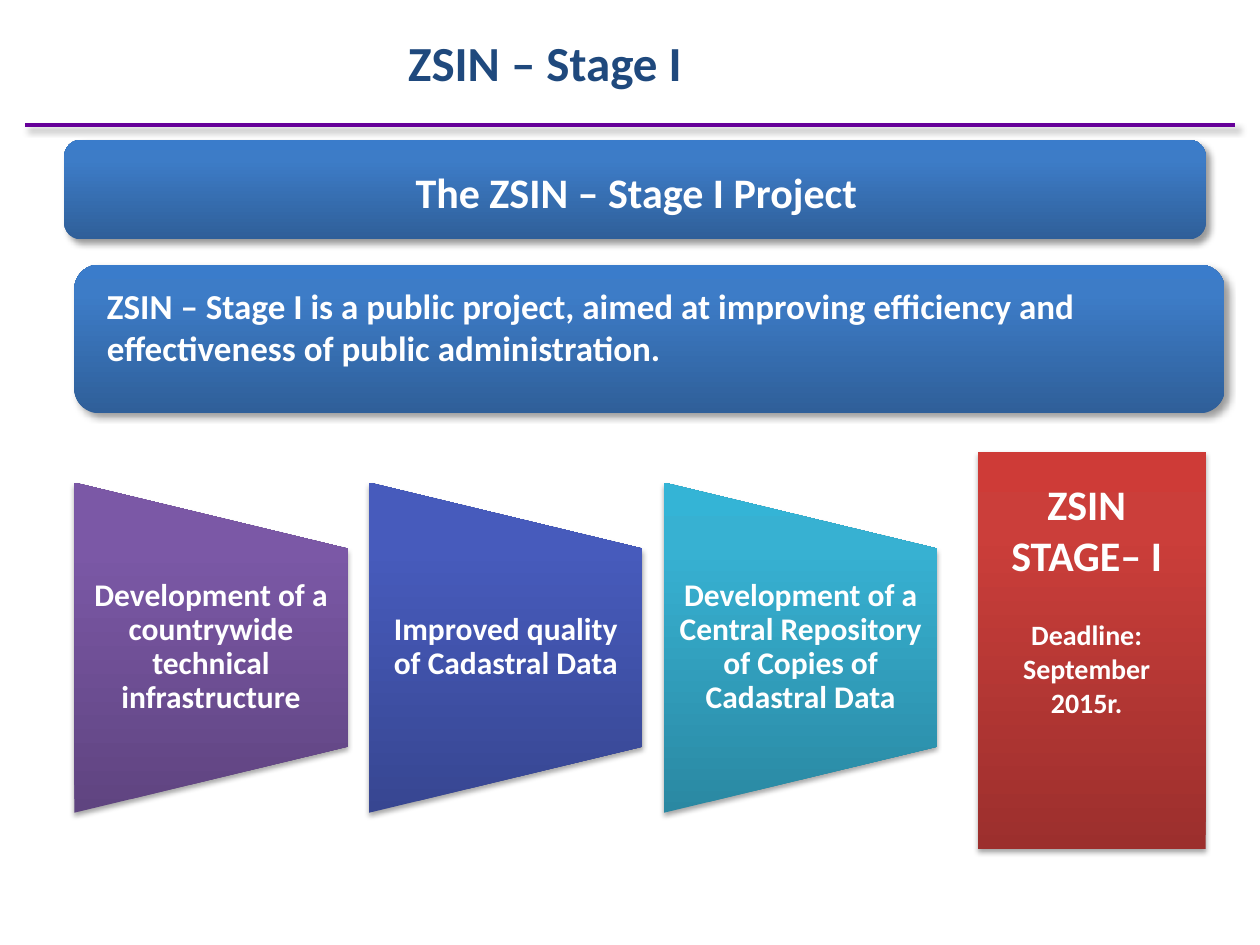
from lxml import etree
from pptx import Presentation
from pptx.dml.color import RGBColor
from pptx.enum.shapes import MSO_CONNECTOR, MSO_SHAPE
from pptx.enum.text import MSO_ANCHOR, MSO_AUTO_SIZE, PP_ALIGN
from pptx.oxml.ns import qn
from pptx.util import Inches, Pt

WIDE, HIGH = Inches(10), Inches(7.5)
COLS, ROWS = 100, 75
LEFT, MID = PP_ALIGN.LEFT, PP_ALIGN.CENTER
TOP, CORE = MSO_ANCHOR.TOP, MSO_ANCHOR.MIDDLE
GROW, FIXED = MSO_AUTO_SIZE.SHAPE_TO_FIT_TEXT, MSO_AUTO_SIZE.NONE
BAND, STEP, BLOCK = (MSO_SHAPE.ROUNDED_RECTANGLE,
                     MSO_SHAPE.FLOWCHART_MANUAL_OPERATION, MSO_SHAPE.RECTANGLE)
LINE = MSO_CONNECTOR.STRAIGHT
COLORS = {"title": "1F497D", "rule": "660099", "text": "FFFFFF", "shade": "000000"}
FADES = {
    "blue": ("2F5F99", "3D7CC7", "3A7CCB"),
    "plum": ("5F4480", "7B58A6", "7C57A8"),
    "navy": ("374691", "475BBC", "455ABF"),
    "teal": ("2A88A2", "37B1D2", "34B4D6"),
    "red": ("9C2F2D", "CB3E3A", "CE3B37"),
}
DEEP = {"alpha": 40, "blur": 4, "dist": 3, "turn": 45}
SOFT = {"alpha": 35, "blur": 3.15, "dist": 1.81, "turn": 90}
STEPS = [
    ("plum", "Development of a countrywide technical infrastructure"),
    ("navy", "Improved quality of Cadastral Data"),
    ("teal", "Development of a Central Repository of Copies of Cadastral Data"),
]


def grid(x, y, w, h):
    """Turn grid columns and rows into slide lengths."""
    return [round(v * unit) for v, unit in
            zip((x, y, w, h), (WIDE / COLS, HIGH / ROWS) * 2)]


def node(root, tag, **attrs):
    """Append a drawing element with the given attributes."""
    return etree.SubElement(root, qn("a:" + tag), {k: str(v) for k, v in attrs.items()})


def tint(root, color, alpha=100):
    """Append a colour with its opacity."""
    node(node(root, "srgbClr", val=color), "alpha", val=alpha * 1000)


def shade(item, alpha, blur, dist, turn):
    """Cast an outer shadow from a shape or line."""
    props = item._element.spPr
    for old in props.findall(qn("a:effectLst")):
        props.remove(old)
    cast = node(node(props, "effectLst"), "outerShdw", blurRad=Pt(blur),
                dist=Pt(dist), dir=turn * 60000, rotWithShape=0)
    tint(cast, COLORS["shade"], alpha)


def panel(slide, kind, area, fade, cast, turn=0):
    """Draw a shape with an upright fade and a shadow."""
    item = slide.shapes.add_shape(kind, *grid(*area))
    item.rotation = turn
    item.shadow.inherit = False
    item.fill.gradient()
    fill = item._element.spPr.find(qn("a:gradFill"))
    fill.clear()
    fill.set("rotWithShape", "0")
    stops = node(fill, "gsLst")
    for pos, color in zip((0, 80, 100), FADES[fade]):
        tint(node(stops, "gs", pos=pos * 1000), color)
    node(fill, "lin", ang=270 * 60000, scaled=0)
    item.line.fill.background()
    shade(item, **cast)


def write(slide, area, lines, size=18, color="text", align=MID, anchor=TOP,
          pad=(0.1, 0.05), lead=None, fit=FIXED):
    """Write lines, each a text or a (text, size, space before) tuple."""
    frame = slide.shapes.add_textbox(*grid(*area)).text_frame
    frame.word_wrap, frame.auto_size = True, fit
    frame.vertical_anchor = anchor
    frame.margin_left = frame.margin_right = Inches(pad[0])
    frame.margin_top = frame.margin_bottom = Inches(pad[1])
    for i, line in enumerate(lines):
        text, points, gap = line if isinstance(line, tuple) else (line, size, 0)
        para = frame.paragraphs[0] if i == 0 else frame.add_paragraph()
        para.alignment, para.line_spacing = align, lead
        if gap:
            para.space_before = Pt(gap)
        run = para.add_run()
        run.text = text
        run.font.name, run.font.size, run.font.bold = "Calibri", Pt(points), True
        run.font.color.rgb = RGBColor.from_string(COLORS[color])


def rule(slide, x, y, end):
    """Draw the line under the title."""
    start, level, stop, _ = grid(x, y, end, y)
    item = slide.shapes.add_connector(LINE, start, level, stop, level)
    item.line.width = Pt(2.5)
    item.line.color.rgb = RGBColor.from_string(COLORS["rule"])
    shade(item, **DEEP)


def steps(slide, x, y, w, h, pitch):
    """Draw the row of steps, each turned to point right."""
    for i, (fade, text) in enumerate(STEPS):
        left = x + i * pitch
        frame = (left + (w - h) / 2, y + (h - w) / 2, h, w)
        panel(slide, STEP, frame, fade, SOFT, turn=270)
        write(slide, (left, y + h / 5, w, h * 3 / 5), [text],
              anchor=CORE, pad=(0.12, 0), lead=0.9)


def main():
    """Build and save the slide."""
    deck = Presentation()
    deck.slide_width, deck.slide_height = WIDE, HIGH
    slide = deck.slides.add_slide(deck.slide_layouts[6])
    rule(slide, 2, 9.9, 98)
    write(slide, (16.1, 2.1, 54.3, 5.5), ["ZSIN – Stage I"], size=28, color="title")
    panel(slide, BAND, (5.1, 11.1, 90.6, 7.9), "blue", DEEP)
    write(slide, (17.7, 11.9, 65.6, 5.9), ["The ZSIN – Stage I Project"],
          size=24, lead=1.2, fit=GROW)
    steps(slide, 5.9, 38.3, 21.7, 26.2, 23.4)
    panel(slide, BLOCK, (77.6, 35.9, 18.1, 31.5), "red", SOFT)
    write(slide, (77.6, 37.5, 17.3, 20.2),
          ["ZSIN", "STAGE– I", ("Deadline:", 16, 22), "September 2015r."][:3]
          + [("September 2015r.", 16, 0)], size=24, fit=GROW)
    panel(slide, BAND, (5.9, 21, 91.3, 11.8), "blue", DEEP)
    write(slide, (7.5, 22.1, 88.9, 7.7),
          ["ZSIN – Stage I is a public project, aimed at improving efficiency "
           "and effectiveness of public administration."],
          size=20, align=LEFT, fit=GROW)


    deck.save("out.pptx")


if __name__ == "__main__":
    main()
